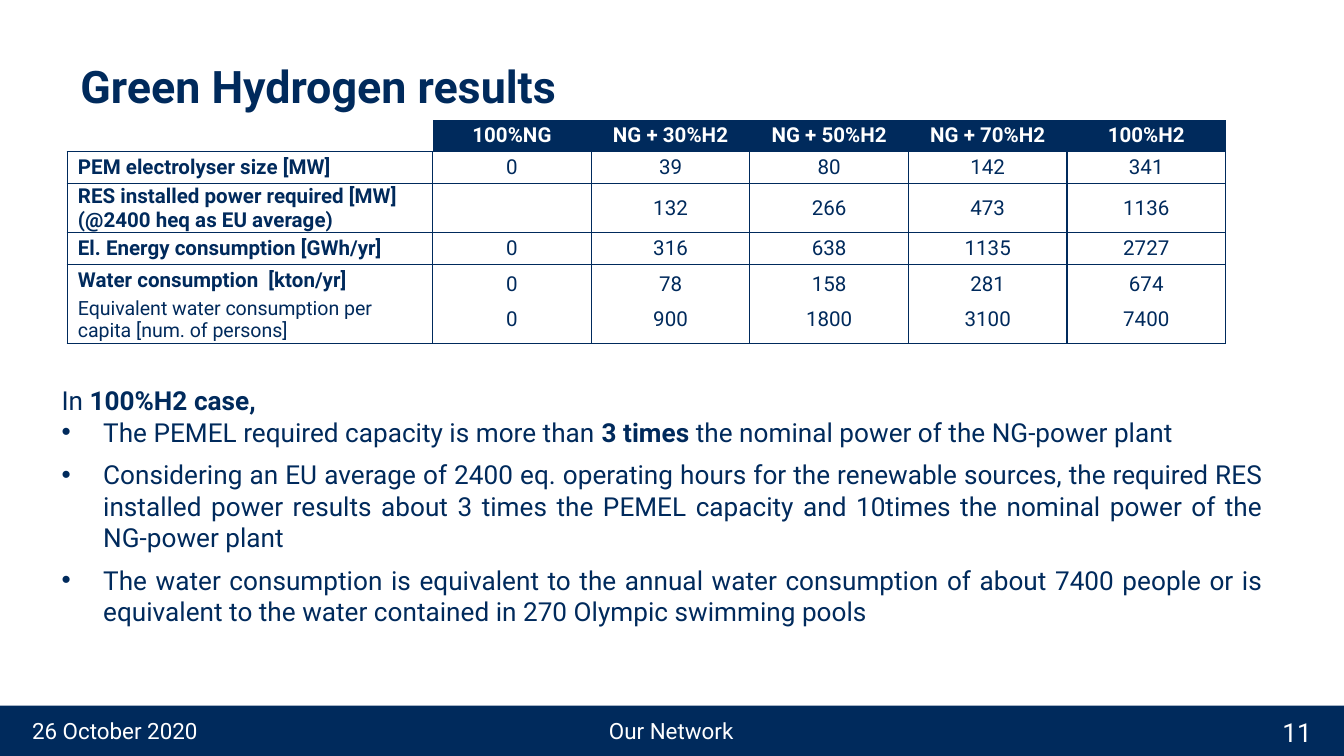
import typing

import pptx
import pptx.dml.color
import pptx.enum.shapes
import pptx.enum.text
import pptx.oxml.ns
import pptx.oxml.xmlchemy
import pptx.util
from lxml import etree

NAVY = pptx.dml.color.RGBColor(0x00, 0x2A, 0x5C)
WHITE = pptx.dml.color.RGBColor(0xFF, 0xFF, 0xFF)
FONT = "Roboto"
ALIGN = pptx.enum.text.PP_ALIGN
ANCHOR = pptx.enum.text.MSO_ANCHOR

# Slide grid: 100 columns by 75 rows
WIDE, HIGH = pptx.util.Inches(10), pptx.util.Inches(5.625)
COL, ROW = WIDE / 100, HIGH / 75


class Area(typing.NamedTuple):
    """Place on the grid, in columns and rows."""
    left: float
    top: float
    width: float
    height: float

    def emu(self) -> list[int]:
        units = (COL, ROW, COL, ROW)
        return [round(n * unit) for n, unit in zip(self, units)]


class Span(typing.NamedTuple):
    text: str
    bold: bool = False


class Label(typing.NamedTuple):
    """One line of text in a box of its own."""
    area: Area
    text: str
    size: float
    color: pptx.dml.color.RGBColor = WHITE
    align: ALIGN = ALIGN.LEFT
    anchor: ANCHOR = ANCHOR.MIDDLE
    bold: bool = False


class Line(typing.NamedTuple):
    """A table row; edges are the sides ruled: l, r, t, b."""
    height: float
    head: str
    values: tuple
    edges: str = "lrtb"
    anchor: ANCHOR = ANCHOR.MIDDLE
    size: float = 11
    bold: bool = True


FOOT = Area(0, 70, 100, 5)
LABELS = [
    Label(Area(38.3, 70, 23.3, 5), "Our Network", 12, align=ALIGN.CENTER),
    Label(Area(1.4, 70, 36, 5), "26 October 2020", 12),
    Label(Area(73.3, 70.1, 25.3, 5), "11", 14, align=ALIGN.RIGHT),
    Label(Area(5, 5.2, 90, 10.2), "Green Hydrogen results", 24, NAVY,
          anchor=ANCHOR.TOP, bold=True),
]

HEADS = ("100%NG", "NG + 30%H2", "NG + 50%H2", "NG + 70%H2", "100%H2")
LINES = [
    Line(3.15, "", HEADS, "b"),
    Line(3.15, "PEM electrolyser size [MW]", (0, 39, 80, 142, 341)),
    Line(4.8, "RES installed power required [MW]\n(@2400 heq as EU average)",
         ("", 132, 266, 473, 1136)),
    Line(3.15, "El. Energy consumption [GWh/yr]", (0, 316, 638, 1135, 2727)),
    Line(3.15, "Water consumption  [kton/yr]", (0, 78, 158, 281, 674),
         "lrt", ANCHOR.BOTTOM),
    Line(4.5, "Equivalent water consumption per capita [num. of persons]",
         (0, 900, 1800, 3100, 7400), "lrb", size=10.5, bold=False),
]
WIDTHS = [27.2] + [11.8] * len(HEADS)
GRID = Area(5, 11.9, sum(WIDTHS), sum(line.height for line in LINES))

BODY = Area(3.6, 37.5, 91.4, 33)
INTRO = [Span("In "), Span("100%H2 case,", True)]
POINTS = [
    [Span("The PEMEL required capacity is more than "),
     Span("3 times ", True),
     Span("the nominal power of the NG-power plant")],
    [Span("Considering an EU average of 2400 eq. operating hours for the "
          "renewable sources, the required RES installed power results about "
          "3 times the PEMEL capacity and 10times the nominal power of the "
          "NG-power plant")],
    [Span("The water consumption is equivalent to the annual water "
          "consumption of about 7400 people or is equivalent to the water "
          "contained in 270 Olympic swimming pools")],
]


def style(font, size: float, color: pptx.dml.color.RGBColor, bold: bool) -> None:
    font.name, font.size, font.bold = FONT, pptx.util.Pt(size), bold
    font.color.rgb = color


def child(parent, tag: str, **attrs: str):
    return etree.SubElement(parent, pptx.oxml.ns.qn(tag), attrs)


def draw_label(slide, label: Label) -> None:
    frame = slide.shapes.add_textbox(*label.area.emu()).text_frame
    frame.word_wrap = True
    frame.vertical_anchor = label.anchor
    frame.text = label.text
    para = frame.paragraphs[0]
    para.alignment = label.align
    style(para.runs[0].font, label.size, label.color, label.bold)


def draw_edges(cell, edges: str) -> None:
    props = cell._tc.get_or_add_tcPr()
    for side in "lrtb":
        edge = child(props, f"a:ln{side.upper()}", w=str(pptx.util.Pt(0.75)))
        if side in edges:
            child(child(edge, "a:solidFill"), "a:srgbClr", val=str(NAVY))
        else:
            child(edge, "a:noFill")


def fill_cell(cell, text: str, line: Line, first: bool, top: bool) -> None:
    draw_edges(cell, line.edges)
    if top and not first:
        cell.fill.solid()
        cell.fill.fore_color.rgb = NAVY
    else:
        cell.fill.background()
    cell.margin_left = cell.margin_right = pptx.util.Inches(0.08)
    cell.margin_top = cell.margin_bottom = 0
    cell.vertical_anchor = ANCHOR.MIDDLE if first else line.anchor
    cell.text_frame.text = text
    size = line.size if first else 11
    for para in cell.text_frame.paragraphs:
        para.alignment = ALIGN.LEFT if first else ALIGN.CENTER
        for run in para.runs:
            style(run.font, size, WHITE if top else NAVY,
                  line.bold if first else top)
        if not text:  # keeps an empty cell from growing its row
            child(para._p, "a:endParaRPr", sz=str(size * 100))


def draw_table(slide) -> None:
    table = slide.shapes.add_table(len(LINES), len(WIDTHS), *GRID.emu()).table
    table.first_row = table.horz_banding = False
    for column, width in zip(table.columns, WIDTHS):
        column.width = round(width * COL)
    for i, line in enumerate(LINES):
        table.rows[i].height = round(line.height * ROW)
        for j, value in enumerate((line.head, *line.values)):
            fill_cell(table.cell(i, j), str(value), line, j == 0, i == 0)


def add_spans(para, spans: list[Span]) -> None:
    para.alignment = ALIGN.JUSTIFY
    for span in spans:
        run = para.add_run()
        run.text = span.text
        style(run.font, 14, NAVY, span.bold)


def draw_body(slide) -> None:
    frame = slide.shapes.add_textbox(*BODY.emu()).text_frame
    frame.word_wrap = True
    add_spans(frame.paragraphs[0], INTRO)
    indent = pptx.util.Inches(0.31)
    for point in POINTS:
        para = frame.add_paragraph()
        props = para._p.get_or_add_pPr()
        props.set("marL", str(indent))
        props.set("indent", str(-indent))
        child(props, "a:buFont", typeface="Arial")
        child(props, "a:buChar", char="•")
        para.space_after = pptx.util.Pt(6)
        add_spans(para, point)


def main() -> None:
    deck = pptx.Presentation()
    deck.slide_width, deck.slide_height = WIDE, HIGH
    slide = deck.slides.add_slide(deck.slide_layouts[6])

    # Footer band
    band = slide.shapes.add_shape(
        pptx.enum.shapes.MSO_SHAPE.RECTANGLE, *FOOT.emu())
    band.shadow.inherit = False
    band.fill.solid()
    band.fill.fore_color.rgb = NAVY
    band.line.fill.background()

    # Footer texts and title
    for label in LABELS:
        draw_label(slide, label)

    # Results and findings
    draw_table(slide)
    draw_body(slide)
    deck.save("out.pptx")


if __name__ == "__main__":
    main()
